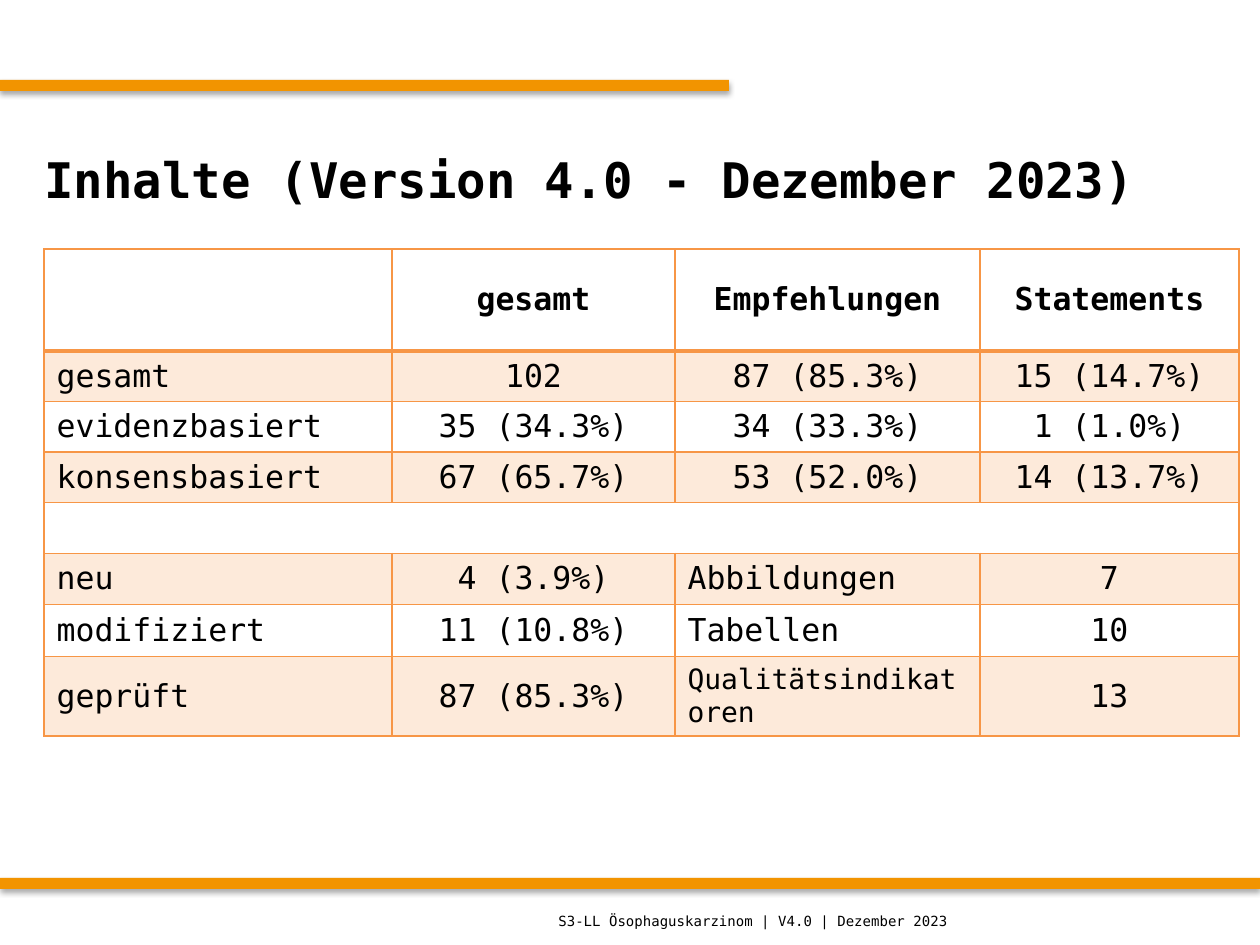
from lxml.etree import SubElement
from pptx import Presentation
from pptx.dml.color import RGBColor
from pptx.enum.shapes import MSO_SHAPE
from pptx.enum.text import MSO_ANCHOR as ANCHOR, PP_ALIGN as ALIGN
from pptx.oxml import parse_xml
from pptx.oxml.ns import nsdecls, qn
from pptx.util import Emu, Pt

PX_PER_INCH = 126
BAR_ORANGE = RGBColor(0xF2, 0x94, 0x00)
TABLE_ORANGE = RGBColor(0xF7, 0x96, 0x46)
BLACK = RGBColor(0, 0, 0)
FONT = "DejaVu Sans Mono"

COLUMN_WIDTHS = [348, 283, 305, 259]
ROW_HEIGHTS = [102, 50, 49, 49, 51, 51, 52, 77]
SPACER_ROW = 4
ROWS = [
    ["", "gesamt", "Empfehlungen", "Statements"],
    ["gesamt", "102", "87 (85.3%)", "15 (14.7%)"],
    ["evidenzbasiert", "35 (34.3%)", "34 (33.3%)", "1 (1.0%)"],
    ["konsensbasiert", "67 (65.7%)", "53 (52.0%)", "14 (13.7%)"],
    ["", "", "", ""],
    ["neu", "4 (3.9%)", "Abbildungen", "7"],
    ["modifiziert", "11 (10.8%)", "Tabellen", "10"],
    ["geprüft", "87 (85.3%)", "Qualitätsindikatoren", "13"],
]


def px(length):
    return Emu(round(length * 914400 / PX_PER_INCH))


class SlideBuilder:
    def __init__(self, slide):
        self.shapes = slide.shapes

    def fill_frame(self, frame, words, size, bold=False, align=ALIGN.LEFT):
        paragraph = frame.paragraphs[0]
        paragraph.alignment = align
        run = paragraph.add_run()
        run.text = words
        run.font.color.rgb = BLACK
        for name, value in {"name": FONT, "size": Pt(size), "bold": bold}.items():
            setattr(run.font, name, value)

    def text(self, left, top, width, height, words, size, bold=False):
        frame = self.shapes.add_textbox(*map(px, (left, top, width, height))).text_frame
        frame.word_wrap = True
        frame.vertical_anchor = ANCHOR.MIDDLE
        self.fill_frame(frame, words, size, bold)

    def bar(self, top, width):
        """Draw an orange rule with a soft shadow, starting at the left edge."""
        bar = self.shapes.add_shape(MSO_SHAPE.RECTANGLE, 0, px(top), px(width), px(11))
        bar.fill.solid()
        bar.fill.fore_color.rgb = BAR_ORANGE
        bar.line.fill.background()
        bar.shadow.inherit = False
        effects = bar._element.spPr.find(qn("a:effectLst"))
        effects.append(parse_xml(
            f'<a:outerShdw {nsdecls("a")} blurRad="{Pt(3.1)}" dist="{Pt(1.8)}" '
            'dir="5400000" rotWithShape="0"><a:srgbClr val="000000">'
            '<a:alpha val="35000"/></a:srgbClr></a:outerShdw>'))

    def borders(self, cell, **widths):
        """Line all four sides, 1 pt unless a side (L, R, T, B) says otherwise."""
        properties = cell._tc.get_or_add_tcPr()
        for index, side in enumerate("LRTB"):
            properties.insert(index, parse_xml(
                f'<a:ln{side} {nsdecls("a")} w="{Pt(widths.get(side, 1))}">'
                f'<a:solidFill><a:srgbClr val="{TABLE_ORANGE}"/></a:solidFill>'
                f'</a:ln{side}>'))

    def tint(self, cell):
        cell.fill.solid()
        cell.fill.fore_color.rgb = TABLE_ORANGE
        color = cell._tc.tcPr.find(qn("a:solidFill")).find(qn("a:srgbClr"))
        SubElement(color, qn("a:alpha")).set("val", "20000")

    def table(self, left, top):
        table = self.shapes.add_table(
            len(ROWS), len(COLUMN_WIDTHS), px(left), px(top),
            px(sum(COLUMN_WIDTHS)), px(sum(ROW_HEIGHTS))).table
        table.first_row = table.horz_banding = False
        for column, width in zip(table.columns, COLUMN_WIDTHS):
            column.width = px(width)
        for row, height in zip(table.rows, ROW_HEIGHTS):
            row.height = px(height)
        for r, labels in enumerate(ROWS):
            for c, label in enumerate(labels):
                cell = table.cell(r, c)
                cell.vertical_anchor = ANCHOR.MIDDLE
                if r % 2:
                    self.tint(cell)
                else:
                    cell.fill.background()
                self.borders(cell, B=2 if r == 0 else 1, T=2 if r == 1 else 1)
                if label:
                    is_name = c == 0 or (c == 2 and r > SPACER_ROW)
                    self.fill_frame(cell.text_frame, label,
                                    size=16 if label == "Qualitätsindikatoren" else 18,
                                    bold=r == 0,
                                    align=ALIGN.LEFT if is_name else ALIGN.CENTER)
        table.cell(SPACER_ROW, 0).merge(table.cell(SPACER_ROW, len(COLUMN_WIDTHS) - 1))


def main():
    deck = Presentation()
    deck.slide_width, deck.slide_height = px(1260), px(945)
    builder = SlideBuilder(deck.slides.add_slide(deck.slide_layouts[6]))
    builder.bar(top=80, width=729)
    builder.bar(top=878, width=1260)
    builder.text(32, 105, 1197, 147, "Inhalte (Version 4.0 - Dezember 2023)", 28, bold=True)
    builder.table(44, 249)
    builder.text(546, 896, 694, 49, "S3-LL Ösophaguskarzinom | V4.0 | Dezember 2023", 8)
    deck.save("out.pptx")


if __name__ == "__main__":
    main()
